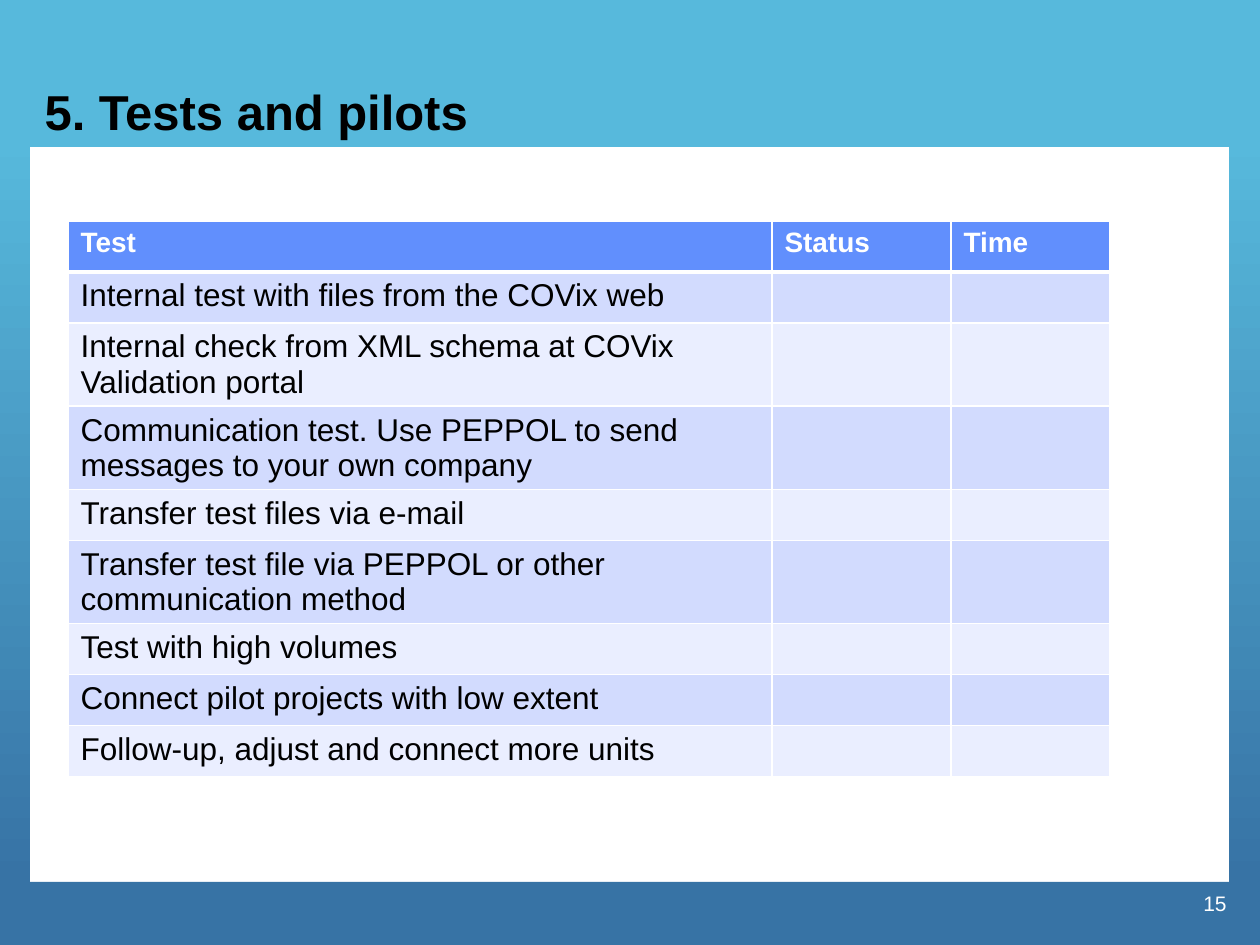
from lxml import etree
from pptx import Presentation
from pptx.dml.color import RGBColor
from pptx.enum.shapes import MSO_SHAPE
from pptx.enum.text import MSO_ANCHOR, MSO_AUTO_SIZE, PP_ALIGN
from pptx.oxml.ns import qn
from pptx.util import Emu, Pt

RECTANGLE = MSO_SHAPE.RECTANGLE
MIDDLE, BOTTOM = MSO_ANCHOR.MIDDLE, MSO_ANCHOR.BOTTOM
LEFT, RIGHT = PP_ALIGN.LEFT, PP_ALIGN.RIGHT
NO_AUTOFIT = MSO_AUTO_SIZE.NONE

FONT = "Arial"
SKY, STEEL = "57B9DC", "3773A5"
WHITE, BLACK = "FFFFFF", "000000"
HEADER_FILL = "618FFD"
BAND_FILLS = ("D2DBFE", "EAEEFF")

TITLE = "5. Tests and pilots"
PAGE_NUMBER = "15"
HEADERS = ("Test", "Status", "Time")
TESTS = (
    "Internal test with files from the COVix web",
    "Internal check from XML schema at COVix Validation portal",
    "Communication test. Use PEPPOL to send messages to your own company",
    "Transfer test files via e-mail",
    "Transfer test file via PEPPOL or other communication method",
    "Test with high volumes",
    "Connect pilot projects with low extent",
    "Follow-up, adjust and connect more units",
)

WIDTH, HEIGHT = 1260, 945
FRAME_PARTS = (
    ((-1, 136, 31, 746), None),
    ((0, 882, WIDTH, 63), STEEL),
    ((0, 0, WIDTH, 147), SKY),
    ((1229, 136, 31, 746), None),
)
TITLE_BOX = (32, 20, 1197, 127)
NUMBER_BOX = (977, 872, 262, 63)
TABLE_LEFT, TABLE_TOP = 68, 221
COLUMN_WIDTHS = (704, 179, 159)
ROW_HEIGHT = 51


def px(value):
    return Emu(round(value * 914400 / 126))


def color(value):
    return RGBColor.from_string(value)


def place(shape, box):
    shape.left, shape.top, shape.width, shape.height = map(px, box)


def format_text(text_frame, size, text_color, bold=False, align=LEFT):
    for paragraph in text_frame.paragraphs:
        paragraph.alignment = align
        font = paragraph.font
        for target in [font] + [run.font for run in paragraph.runs]:
            target.name, target.size, target.bold = FONT, Pt(size), bold
            target.color.rgb = color(text_color)


def add_frame_part(slide, box, fill_color):
    shape = slide.shapes.add_shape(RECTANGLE, *map(px, box))
    shape.shadow.inherit = False
    shape.line.fill.background()
    if fill_color:
        shape.fill.solid()
        shape.fill.fore_color.rgb = color(fill_color)
        return
    shape.fill.gradient()
    shape.fill.gradient_angle = 270
    for stop, position, stop_color in zip(shape.fill.gradient_stops, (0, 1), (SKY, STEEL)):
        stop.position = position
        stop.color.rgb = color(stop_color)


def set_borders(cell, widths):
    properties = cell._tc.get_or_add_tcPr()
    for side, width in widths.items():
        line = etree.SubElement(properties, qn(f"a:ln{side}"), w=str(Pt(width)))
        fill = etree.SubElement(line, qn("a:solidFill"))
        etree.SubElement(fill, qn("a:srgbClr"), val=WHITE)


def add_test_table(slide):
    rows = [HEADERS] + [(test, "", "") for test in TESTS]
    shape = slide.shapes.add_table(
        len(rows), len(HEADERS), px(TABLE_LEFT), px(TABLE_TOP),
        px(sum(COLUMN_WIDTHS)), px(ROW_HEIGHT * len(rows)))
    table = shape.table
    table.horz_banding = False
    for column, width in zip(table.columns, COLUMN_WIDTHS):
        column.width = px(width)
    for row_index, texts in enumerate(rows):
        header = row_index == 0
        fill_color = HEADER_FILL if header else BAND_FILLS[(row_index - 1) % 2]
        top = 3 if row_index == 1 else 1
        bottom = 3 if header else 1
        for column_index, text in enumerate(texts):
            cell = table.cell(row_index, column_index)
            cell.text_frame.text = text
            format_text(cell.text_frame, 16 if header else 18,
                        WHITE if header else BLACK, bold=header)
            set_borders(cell, {"L": 1, "R": 1, "T": top, "B": bottom})
            cell.fill.solid()
            cell.fill.fore_color.rgb = color(fill_color)


def main():
    presentation = Presentation()
    presentation.slide_width, presentation.slide_height = px(WIDTH), px(HEIGHT)
    slide = presentation.slides.add_slide(presentation.slide_layouts[5])
    for box, fill_color in FRAME_PARTS:
        add_frame_part(slide, box, fill_color)

    number = slide.shapes.add_textbox(*map(px, NUMBER_BOX))
    number.text_frame.text = PAGE_NUMBER
    number.text_frame.word_wrap = True
    number.text_frame.vertical_anchor = MIDDLE
    format_text(number.text_frame, 12, WHITE, align=RIGHT)

    title = slide.shapes.title
    title.element.getparent().append(title.element)
    place(title, TITLE_BOX)
    title.text_frame.text = TITLE
    title.text_frame.auto_size = NO_AUTOFIT
    title.text_frame.vertical_anchor = BOTTOM
    format_text(title.text_frame, 28, BLACK, bold=True)

    add_test_table(slide)
    presentation.save("out.pptx")


if __name__ == "__main__":
    main()
